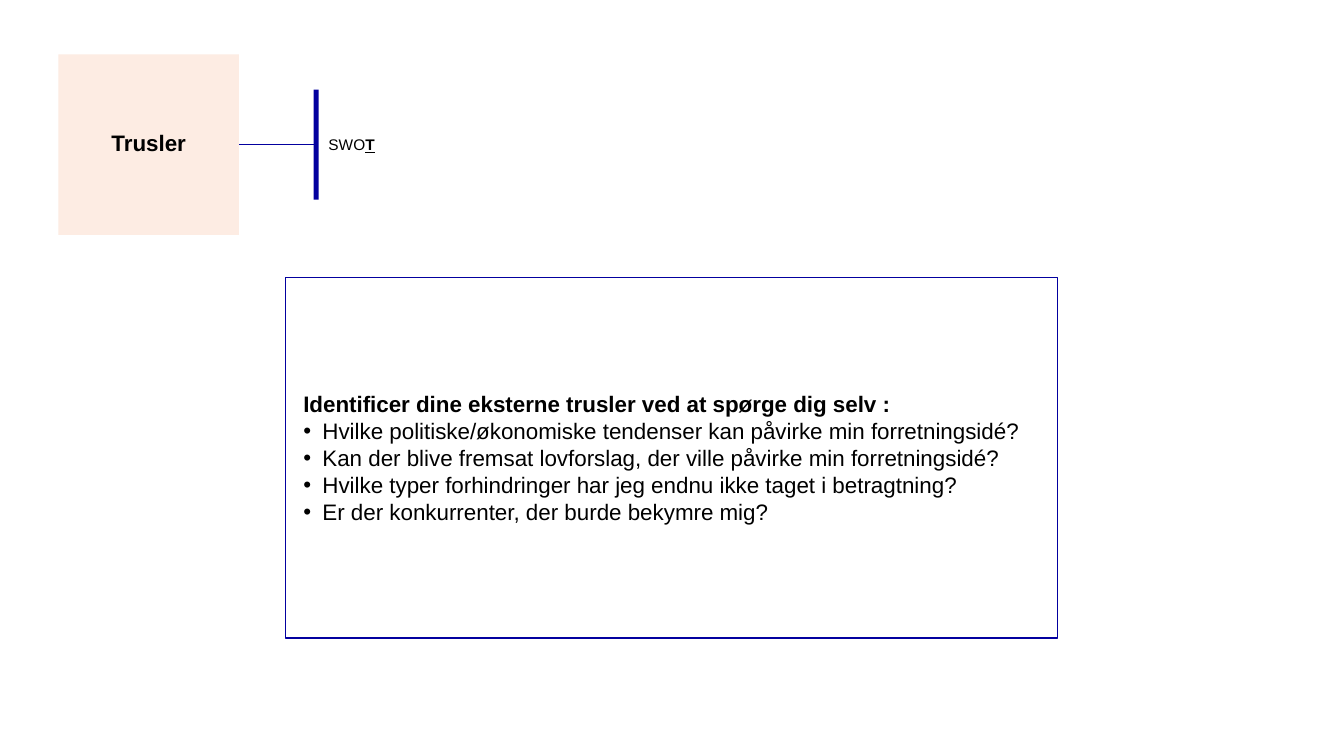
from lxml import etree
from pptx import Presentation
from pptx import util as u
from pptx.dml.color import RGBColor
from pptx.enum import shapes, text
from pptx.oxml.ns import qn

TITLE = "Trusler"
SWOT_LETTERS = [("SWO", False), ("T", True)]
HEADING = "Identificer dine eksterne trusler ved at spørge dig selv :"
QUESTIONS = [
    "Hvilke politiske/økonomiske tendenser kan påvirke min forretningsidé?",
    "Kan der blive fremsat lovforslag, der ville påvirke min forretningsidé?",
    "Hvilke typer forhindringer har jeg endnu ikke taget i betragtning?",
    "Er der konkurrenter, der burde bekymre mig?",
]
COLORS = {"navy": "03009F", "peach": "FDECE3", "black": "000000"}
FONT = "Arial"

# left, top, width, height in inches
TILE = (0.58, 0.54, 1.79, 1.79)
BAR = (3.11, 0.89, 0.05, 1.09)
SWOT = (3.16, 1.29, 1.86, 0.29)
PANEL = (2.83, 2.75, 7.66, 3.58)


def color(name):
    return RGBColor.from_string(COLORS[name])


def add_rectangle(slide, box, fill=None, line=None):
    rectangle = slide.shapes.add_shape(
        shapes.MSO_SHAPE.RECTANGLE, *map(u.Inches, box))
    rectangle.shadow.inherit = False
    if fill:
        rectangle.fill.solid()
        rectangle.fill.fore_color.rgb = color(fill)
    else:
        rectangle.fill.background()
    if line:
        rectangle.line.color.rgb = color(line)
        rectangle.line.width = u.Pt(1)
    else:
        rectangle.line.fill.background()
    return rectangle


def format_run(run, size, bold=False):
    run.font.name = FONT
    run.font.size = u.Pt(size)
    run.font.bold = bold
    run.font.color.rgb = color("black")


def indent(paragraph, left, first=0.0, bullet=None):
    properties = paragraph._p.get_or_add_pPr()
    properties.set("marL", str(u.Inches(left)))
    properties.set("indent", str(u.Inches(first)))
    if bullet:
        etree.SubElement(properties, qn("a:buFont")).set("typeface", FONT)
        etree.SubElement(properties, qn("a:buChar")).set("char", bullet)


def add_title(slide):
    add_rectangle(slide, TILE, fill="peach")
    frame = slide.shapes.add_textbox(*map(u.Inches, TILE)).text_frame
    frame.word_wrap = True
    frame.vertical_anchor = text.MSO_ANCHOR.MIDDLE
    frame.margin_left = frame.margin_right = 0
    frame.text = TITLE
    title = frame.paragraphs[0]
    title.alignment = text.PP_ALIGN.CENTER
    title.line_spacing = 0.9
    format_run(title.runs[0], 16, bold=True)


def add_swot_label(slide):
    left, top, width, height = TILE
    middle = u.Inches(top + height / 2)
    link = slide.shapes.add_connector(
        shapes.MSO_CONNECTOR.STRAIGHT,
        u.Inches(BAR[0]), middle, u.Inches(left + width), middle)
    link.line.color.rgb = color("navy")
    link.line.width = u.Pt(1)
    etree.SubElement(link._element.spPr, qn("a:effectLst"))

    frame = slide.shapes.add_textbox(*map(u.Inches, SWOT)).text_frame
    frame.word_wrap = True
    frame.auto_size = text.MSO_AUTO_SIZE.SHAPE_TO_FIT_TEXT
    for letters, highlighted in SWOT_LETTERS:
        run = frame.paragraphs[0].add_run()
        run.text = letters
        format_run(run, 11, bold=highlighted)
        run.font.underline = highlighted
    add_rectangle(slide, BAR, fill="navy")


def add_questions(slide):
    frame = add_rectangle(slide, PANEL, line="navy").text_frame
    frame.word_wrap = True
    frame.vertical_anchor = text.MSO_ANCHOR.MIDDLE
    frame.text = "\n".join([HEADING, *QUESTIONS])
    for number, paragraph in enumerate(frame.paragraphs):
        paragraph.alignment = text.PP_ALIGN.LEFT
        is_heading = number == 0
        if is_heading:
            indent(paragraph, 0.08)
        else:
            indent(paragraph, 0.27, -0.19, "•")
        format_run(paragraph.runs[0], 16, bold=is_heading)


def main():
    deck = Presentation()
    deck.slide_width, deck.slide_height = u.Inches(13.33), u.Inches(7.5)
    slide = deck.slides.add_slide(deck.slide_layouts[6])
    add_questions(slide)
    add_title(slide)
    add_swot_label(slide)
    deck.save("out.pptx")


if __name__ == "__main__":
    main()
